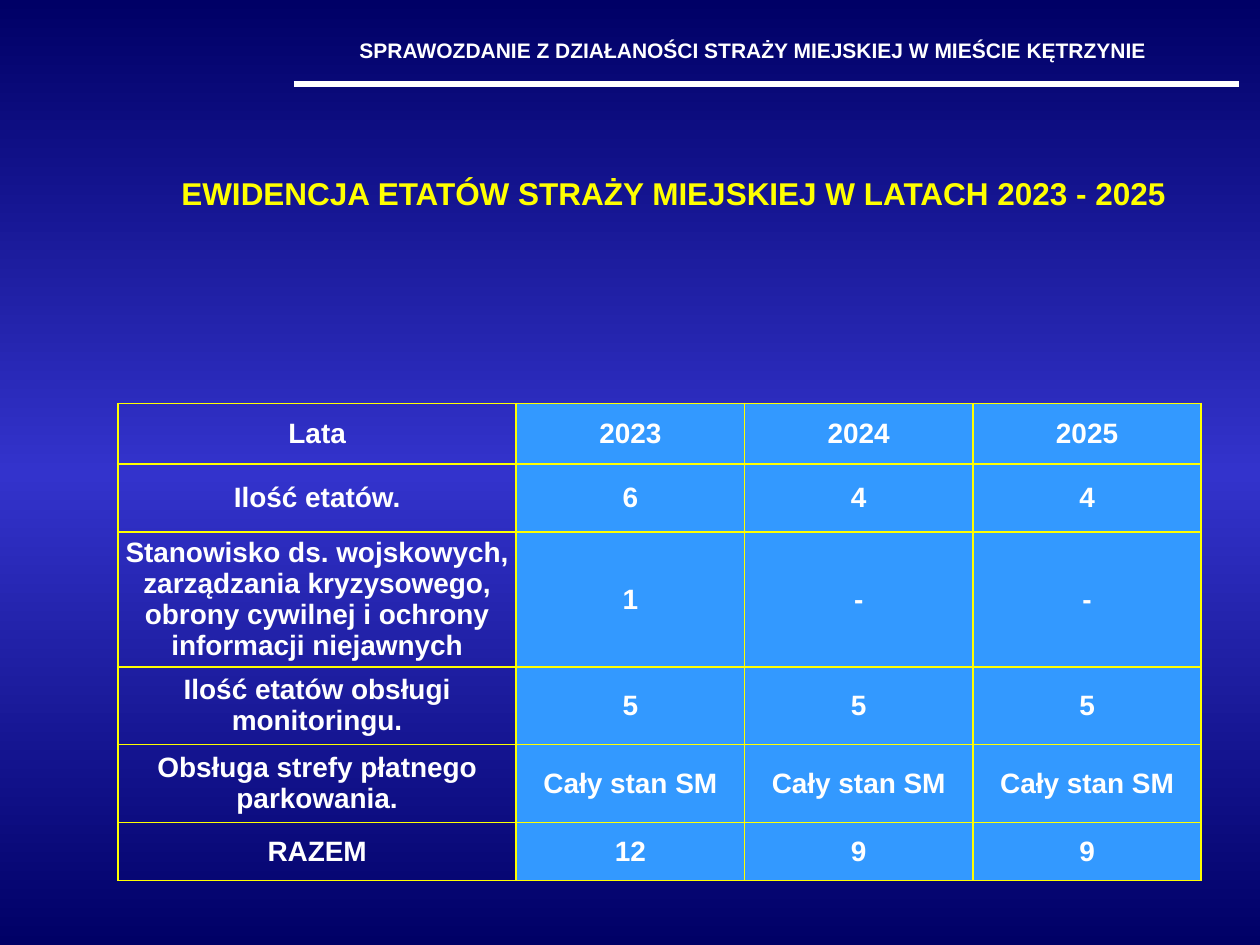
from copy import deepcopy
from dataclasses import dataclass

from lxml import etree
from pptx import Presentation
from pptx.dml.color import RGBColor
from pptx.enum import shapes, text
from pptx.oxml import ns
from pptx.util import Pt

FONT = "Arial"
WHITE, YELLOW, SKY = "FFFFFF", "FFFF00", "3399FF"
NAVY, INDIGO = "000066", "3333CC"


@dataclass
class Box:
    left: float
    top: float
    width: float
    height: float

    def lengths(self):
        return [Pt(value) for value in (self.left, self.top, self.width, self.height)]


@dataclass
class Row:
    height: float
    label: str
    values: tuple


ROWS = [
    Row(34.5, "Lata", ("2023", "2024", "2025")),
    Row(39, "Ilość etatów.", ("6", "4", "4")),
    Row(77, "Stanowisko ds. wojskowych, zarządzania kryzysowego, "
            "obrony cywilnej i ochrony informacji niejawnych", ("1", "-", "-")),
    Row(44.5, "Ilość etatów obsługi monitoringu.", ("5",) * 3),
    Row(44.5, "Obsługa strefy płatnego parkowania.", ("Cały stan SM",) * 3),
    Row(33, "RAZEM", ("12", "9", "9")),
]
COLUMNS = [227.5] + [130.5] * 3


def colour(value: str) -> RGBColor:
    return RGBColor.from_string(value)


def write(frame, words: str, *, size: float, color: str = WHITE) -> None:
    frame.word_wrap = True
    paragraph = frame.paragraphs[0]
    paragraph.alignment = text.PP_ALIGN.CENTER
    run = paragraph.add_run()
    run.text = words
    run.font.name = FONT
    run.font.size = Pt(size)
    run.font.bold = True
    run.font.color.rgb = colour(color)


def paint_background(slide) -> None:
    fill = slide.background.fill
    fill.gradient()
    fill.gradient_angle = 270
    first = slide.element.find(".//" + ns.qn("a:gs"))
    first.addnext(deepcopy(first))
    for stop, position, color in zip(fill.gradient_stops, (0, 0.5, 1), (NAVY, INDIGO, NAVY)):
        stop.position = position
        stop.color.rgb = colour(color)


def draw_rule(slide, left: float, right: float, top: float) -> None:
    rule = slide.shapes.add_connector(
        shapes.MSO_CONNECTOR.STRAIGHT, Pt(left), Pt(top), Pt(right), Pt(top))
    rule.line.color.rgb = colour(WHITE)
    rule.line.width = Pt(3)
    etree.SubElement(rule.element.spPr, ns.qn("a:effectLst"))


def add_borders(cell, color: str, width: float) -> None:
    properties = cell._tc.get_or_add_tcPr()
    for index, side in enumerate(("lnL", "lnR", "lnT", "lnB")):
        line = etree.Element(ns.qn(f"a:{side}"), w=str(Pt(width)))
        fill = etree.SubElement(line, ns.qn("a:solidFill"))
        etree.SubElement(fill, ns.qn("a:srgbClr"), val=color)
        properties.insert(index, line)


def fill_cell(cell, words: str, is_label: bool) -> None:
    write(cell.text_frame, words, size=16)
    cell.vertical_anchor = text.MSO_ANCHOR.MIDDLE
    across, down = (3, 3) if is_label else (7.2, 3.6)
    cell.margin_left = cell.margin_right = Pt(across)
    cell.margin_top = cell.margin_bottom = Pt(down)
    if is_label:
        cell.fill.background()
    else:
        cell.fill.solid()
        cell.fill.fore_color.rgb = colour(SKY)
    add_borders(cell, YELLOW, 1)


def draw_table(slide, left: float, top: float) -> None:
    box = Box(left, top, sum(COLUMNS), sum(row.height for row in ROWS))
    table = slide.shapes.add_table(len(ROWS), len(COLUMNS), *box.lengths()).table
    table.first_row = table.horz_banding = False
    for column, width in zip(table.columns, COLUMNS):
        column.width = Pt(width)
    for row_index, row in enumerate(ROWS):
        table.rows[row_index].height = Pt(row.height)
        for column_index, words in enumerate((row.label, *row.values)):
            fill_cell(table.cell(row_index, column_index), words, column_index == 0)


def place_title(slide, box: Box, words: str) -> None:
    title = slide.shapes.title
    title.left, title.top, title.width, title.height = box.lengths()
    title.text_frame.auto_size = text.MSO_AUTO_SIZE.NONE
    title.text_frame.vertical_anchor = text.MSO_ANCHOR.TOP
    write(title.text_frame, words, size=18, color=YELLOW)


def main() -> None:
    presentation = Presentation()
    presentation.slide_width, presentation.slide_height = Pt(720), Pt(540)
    slide = presentation.slides.add_slide(presentation.slide_layouts[5])
    paint_background(slide)
    draw_rule(slide, 168, 708, 48)
    draw_table(slide, 67.5, 230.5)
    place_title(slide, Box(82, 96, 606, 29),
                "EWIDENCJA ETATÓW STRAŻY MIEJSKIEJ W LATACH 2023 - 2025")
    header = slide.shapes.add_textbox(*Box(156, 18, 552, 21.8).lengths())
    write(header.text_frame,
          "SPRAWOZDANIE Z DZIAŁANOŚCI STRAŻY MIEJSKIEJ W MIEŚCIE KĘTRZYNIE ", size=12)
    presentation.save("out.pptx")


if __name__ == "__main__":
    main()
